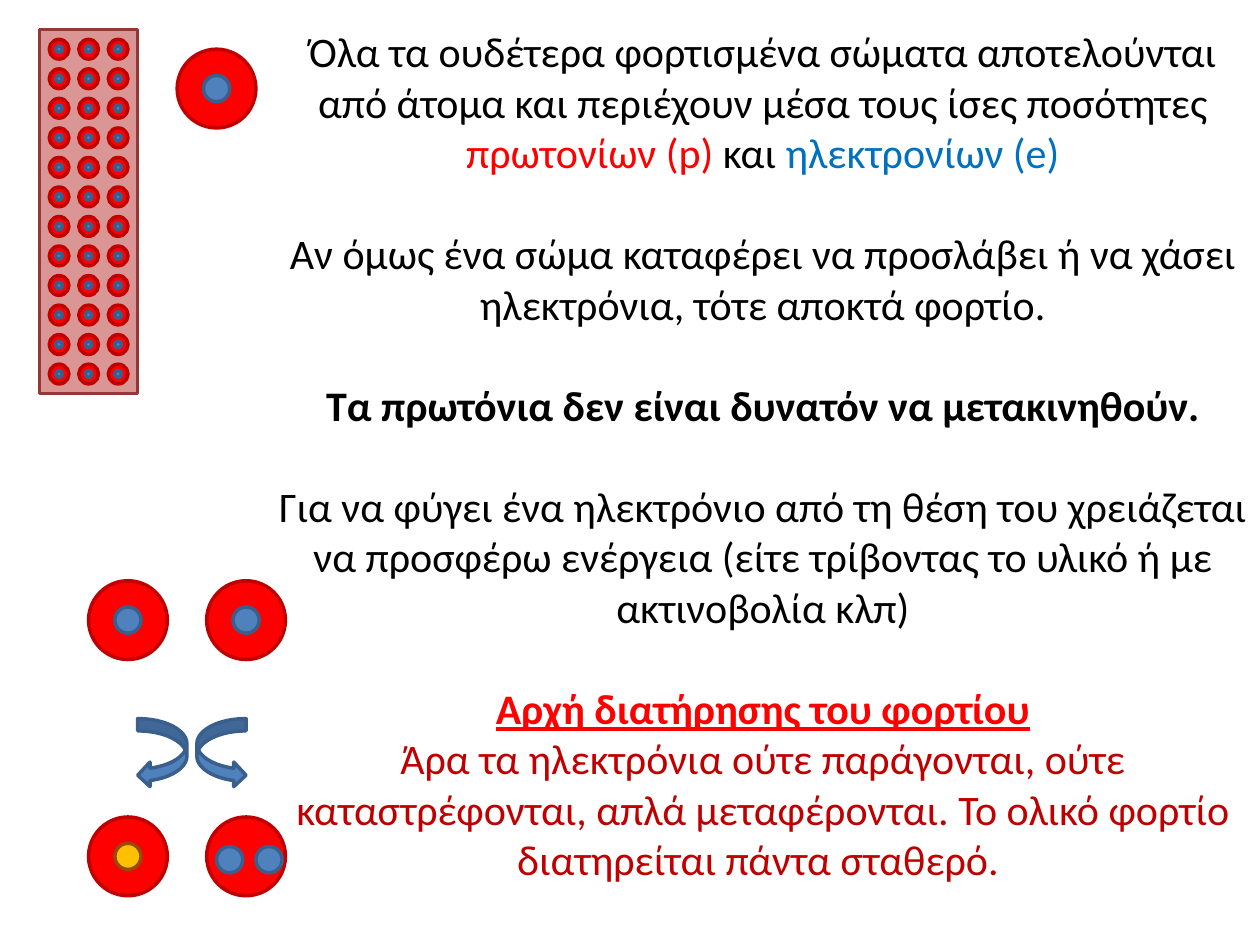
from pptx import Presentation
from pptx.dml.color import RGBColor
from pptx.enum.shapes import MSO_SHAPE
from pptx.enum.text import MSO_AUTO_SIZE, PP_ALIGN
from pptx.util import Inches, Pt

COLORS = {
    "black": "000000", "red": "FF0000", "dark red": "C00000",
    "blue": "4F81BD", "dark blue": "3A5F8C", "bright blue": "0070C0",
    "pink": "D99694", "maroon": "953735", "gold": "FFC000", "brown": "984807",
}

deck = Presentation()
deck.slide_width, deck.slide_height = Inches(10), Inches(7.5)
page = deck.slides.add_slide(deck.slide_layouts[6])
UNIT = deck.slide_width / 128
ATOM = 8
ELECTRON = ATOM / 3


def add_figure(shapes, kind, column, row, width, height, fill, line):
    figure = shapes.add_shape(kind, *(round(n * UNIT) for n in (column, row, width, height)))
    figure.shadow.inherit = False
    figure.fill.solid()
    figure.fill.fore_color.rgb = RGBColor.from_string(COLORS[fill])
    figure.line.color.rgb = RGBColor.from_string(COLORS[line])
    figure.line.width = Pt(2)
    return figure


def add_atom(column, row, size=ATOM, core=("blue", "dark blue")):
    atom = page.shapes.add_group_shape().shapes
    add_figure(atom, MSO_SHAPE.OVAL, column, row, size, size, "red", "dark red")
    add_figure(atom, MSO_SHAPE.OVAL, column + size / 3, row + size / 3, size / 3, size / 3, *core)


add_figure(page.shapes, MSO_SHAPE.RECTANGLE, 4, 3, 10, 37, "pink", "maroon")
for row in range(12):
    for column in range(3):
        add_atom(5 + 3 * column, 4 + 3 * row, 2)

for column, row in ((18, 5), (21, 59), (9, 59)):
    add_atom(column, row)

for column, flipped in ((20, False), (14, True)):
    arrow = add_figure(page.shapes, MSO_SHAPE.CURVED_RIGHT_ARROW, column, 73, 5, 7, "blue", "dark blue")
    if flipped:
        arrow._element.spPr.xfrm.set("flipH", "1")

add_figure(page.shapes, MSO_SHAPE.OVAL, 21, 83, ATOM, ATOM, "red", "dark red")
for column in (26, 22):
    add_figure(page.shapes, MSO_SHAPE.OVAL, column, 86, ELECTRON, ELECTRON, "blue", "dark blue")

box = page.shapes.add_textbox(*(round(n * UNIT) for n in (27, 2, 101, 89.2)))
frame = box.text_frame
frame.word_wrap = True
frame.auto_size = MSO_AUTO_SIZE.SHAPE_TO_FIT_TEXT

LINE_GAP = 29
PARAGRAPHS = [
    (0, False, [
        ("Όλα τα ουδέτερα φορτισμένα σώματα αποτελούνται από άτομα και περιέχουν μέσα τους ίσες ποσότητες ", "black"),
        ("πρωτονίων (p)", "red"), (" και ", "black"), ("ηλεκτρονίων (e)", "bright blue")]),
    (LINE_GAP, False, [
        ("Αν όμως ένα σώμα καταφέρει να προσλάβει ή να χάσει ηλεκτρόνια, τότε αποκτά φορτίο.", "black")]),
    (LINE_GAP, True, [("Τα πρωτόνια δεν είναι δυνατόν να μετακινηθούν.", "black")]),
    (LINE_GAP, False, [
        ("Για να φύγει ένα ηλεκτρόνιο από τη θέση του χρειάζεται να προσφέρω ενέργεια "
         "(είτε τρίβοντας το υλικό ή με ακτινοβολία κλπ)", "black")]),
    (LINE_GAP, True, [("Αρχή διατήρησης του φορτίου", "red")]),
    (0, False, [
        ("Άρα τα ηλεκτρόνια ούτε παράγονται, ούτε καταστρέφονται, απλά μεταφέρονται. "
         "Το ολικό φορτίο διατηρείται πάντα σταθερό. ", "dark red")]),
]
for index, (gap, bold, spans) in enumerate(PARAGRAPHS):
    para = frame.add_paragraph() if index else frame.paragraphs[0]
    para.alignment = PP_ALIGN.CENTER
    para.space_before = Pt(gap)
    para.font.name = "Calibri"
    para.font.size = Pt(24)
    para.font.bold = bold
    for text, color in spans:
        span = para.add_run()
        span.text = text
        span.font.color.rgb = RGBColor.from_string(COLORS[color])
        span.font.underline = True if bold and color == "red" else None

add_atom(9, 83, core=("gold", "brown"))

deck.save("out.pptx")
